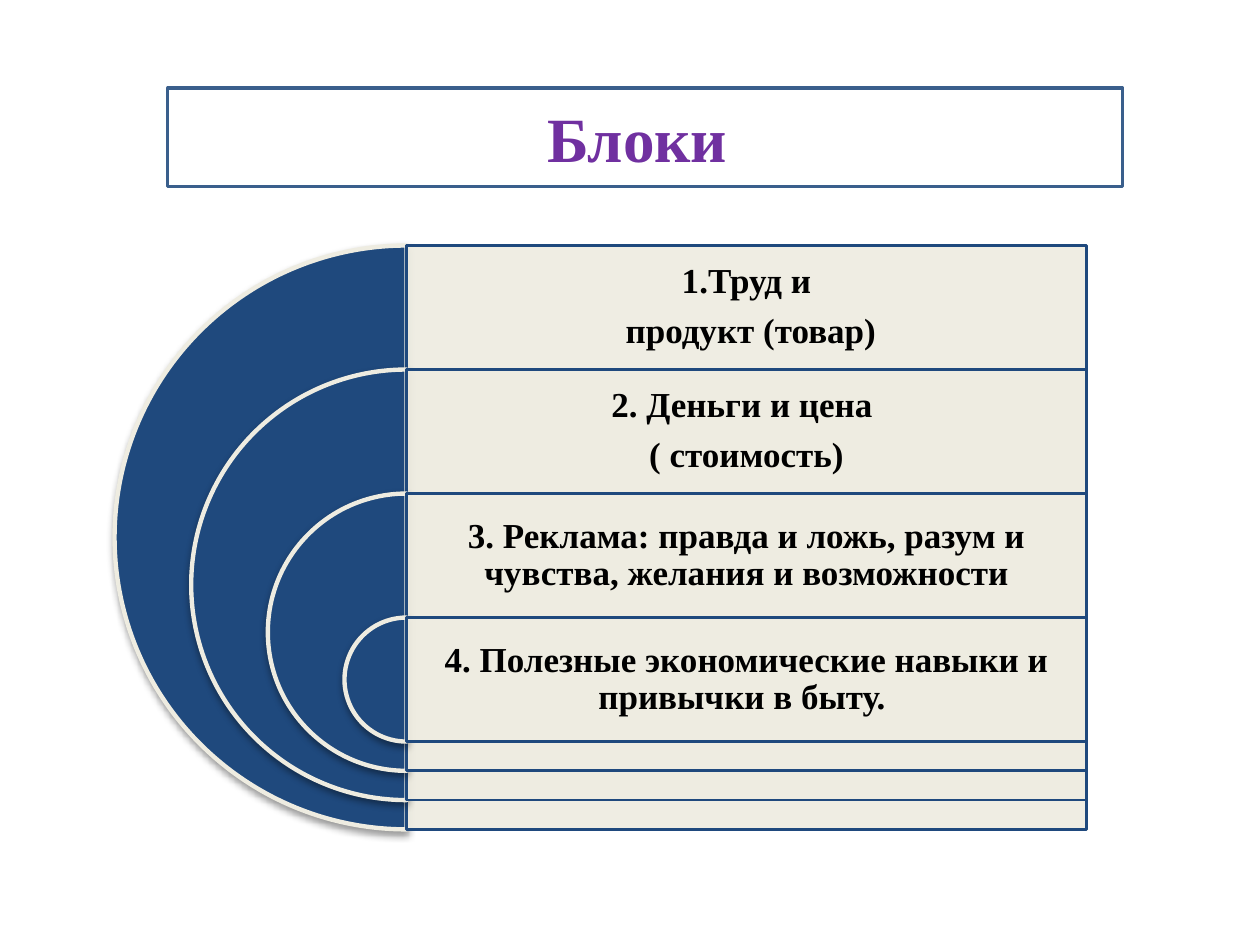
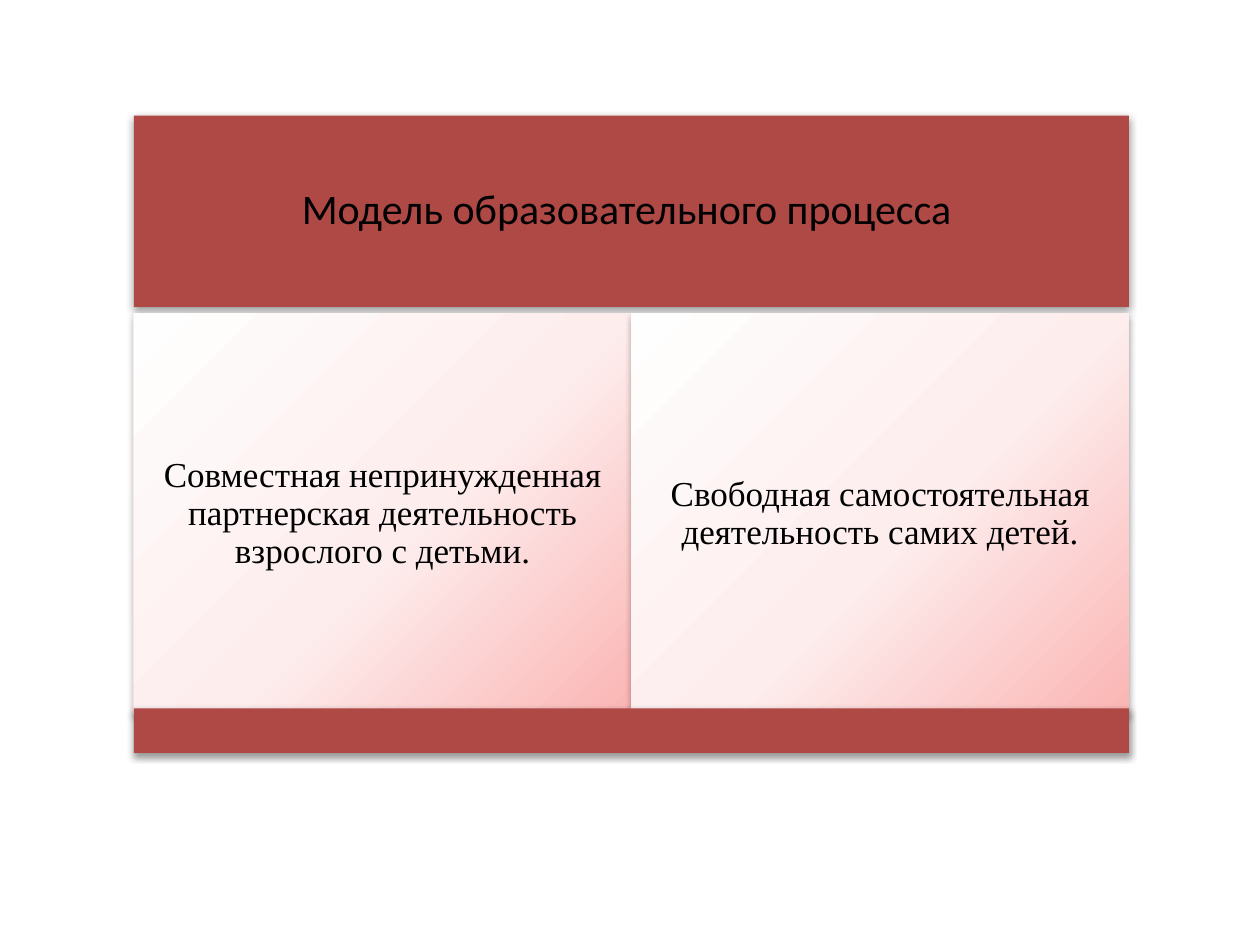
from collections import namedtuple

from lxml.etree import SubElement
from pptx import Presentation
from pptx.dml.color import RGBColor
from pptx.enum.shapes import MSO_SHAPE
from pptx.enum.text import MSO_ANCHOR, PP_ALIGN
from pptx.oxml.ns import qn
from pptx.util import Cm, Pt

Box = namedtuple("Box", "left top width height")

NAVY = "1F497D"
CREAM = "EEECE1"
BRICK = "AE4946"
WHITE = "FFFFFF"
BLACK = "000000"
SERIF = "Times New Roman"
BODY = {"name": SERIF, "size": Pt(20)}
BOLD_BODY = {**BODY, "bold": True}
TITLE = {"name": SERIF, "size": Pt(36), "bold": True}
HEADER = {"name": "Calibri", "size": Pt(24)}
PINK_STOPS = [(0, "FFFEFE"), (55, "FDEDED"), (100, "FBB5B4")]
PINK_FOCUS = {"l": -40, "t": -90, "r": 140, "b": 190}

BLOCKS = [
    ["1.Труд и", " продукт (товар)"],
    ["2. Деньги и цена ", "( стоимость)"],
    ["3. Реклама: правда и ложь, разум и чувства, желания и возможности"],
    ["4. Полезные экономические навыки и привычки в быту. "],
]
ACTIVITIES = [
    "Совместная непринужденная партнерская деятельность взрослого с детьми.",
    "Свободная самостоятельная деятельность самих детей.",
]


def color(hex_text):
    return RGBColor.from_string(hex_text)


def percent(value):
    return str(value * 1000)


def element(parent, tag, **attributes):
    return SubElement(parent, qn(f"a:{tag}"), attributes)


def add_panel(page, box, fill=None, line=None, kind=MSO_SHAPE.RECTANGLE):
    panel = page.shapes.add_shape(kind, *map(Cm, box))
    panel.shadow.inherit = False
    if fill:
        panel.fill.solid()
        panel.fill.fore_color.rgb = color(fill)
    if line:
        line_color, line_width = line
        panel.line.color.rgb = color(line_color)
        panel.line.width = Pt(line_width)
    else:
        panel.line.fill.background()
    return panel


def set_alpha(panel, value):
    tone = panel._element.spPr.find(qn("a:solidFill"))[0]
    element(tone, "alpha", val=percent(value))


def drop_shadow(panel):
    effects = panel._element.spPr.find(qn("a:effectLst"))
    shadow = element(effects, "outerShdw", blurRad=str(Pt(4.1)), dist=str(Pt(2)),
                     dir="5400000", rotWithShape="0")
    tone = element(shadow, "srgbClr", val=BLACK)
    element(tone, "alpha", val=percent(40))


def fill_radial(panel, stops, focus):
    panel.fill.gradient()
    gradient = panel._element.spPr.find(qn("a:gradFill"))
    for child in list(gradient):
        gradient.remove(child)
    stop_list = element(gradient, "gsLst")
    for position, tone in stops:
        stop = element(stop_list, "gs", pos=percent(position))
        element(stop, "srgbClr", val=tone)
    radial = element(gradient, "path", path="circle")
    element(radial, "fillToRect", **{side: percent(v) for side, v in focus.items()})


def write(shape, lines, style, tone=BLACK, inset=None, tight=True):
    frame = shape.text_frame
    frame.word_wrap = True
    frame.vertical_anchor = MSO_ANCHOR.MIDDLE
    if inset is not None:
        for side in ("left", "right", "top", "bottom"):
            setattr(frame, f"margin_{side}", Cm(inset))
    for index, line in enumerate(lines):
        para = frame.add_paragraph() if index else frame.paragraphs[0]
        para.alignment = PP_ALIGN.CENTER
        if tight:
            para.line_spacing = 0.9
            para.space_after = Pt(style["size"].pt * 0.35)
        span = para.add_run()
        span.text = line
        for name, value in style.items():
            setattr(span.font, name, value)
        span.font.color.rgb = color(tone)


def add_title(page, box, text):
    panel = add_panel(page, box, WHITE, ("3A5F8C", 2))
    write(panel, [text], TITLE, "7030A0", tight=False)


def add_nested_blocks(page, box, blocks, band=2.5):
    lip = (box.height - len(blocks) * band) / (len(blocks) - 1)
    center = box.left + box.height / 2
    bar_width = box.width - box.height / 2
    for index, lines in enumerate(blocks):
        top = box.top + index * band
        size = box.height - index * (band + lip)
        half_disc = add_panel(page, Box(center - size / 2, top, size, size),
                              NAVY, (CREAM, 2.5), MSO_SHAPE.PIE)
        half_disc.adjustments[0] = 54
        half_disc.adjustments[1] = 162
        drop_shadow(half_disc)
        bar = add_panel(page, Box(center, top, bar_width, size), CREAM, (NAVY, 1.5))
        set_alpha(bar, 90)
        label = page.shapes.add_textbox(*map(Cm, (center, top, bar_width, band)))
        write(label, lines, BOLD_BODY, inset=0.2)


def add_process_model(page, box, header, columns):
    head_height = box.height * 0.3
    head = add_panel(page, box._replace(height=head_height), BRICK)
    drop_shadow(head)
    write(head, [header], HEADER, inset=0.25)

    width = box.width / len(columns)
    top = box.top + head_height + 0.13
    for index, text in enumerate(columns):
        column = add_panel(page, Box(box.left + index * width, top, width, box.height * 0.63))
        fill_radial(column, PINK_STOPS, PINK_FOCUS)
        drop_shadow(column)
        write(column, [text], BODY, inset=0.2)

    foot_height = box.height * 0.07
    foot_top = box.top + box.height - foot_height
    drop_shadow(add_panel(page, box._replace(top=foot_top, height=foot_height), BRICK))


def add_page(deck):
    page = deck.slides.add_slide(deck.slide_layouts[6])
    page.background.fill.solid()
    page.background.fill.fore_color.rgb = color(WHITE)
    return page


def main():
    deck = Presentation()
    deck.slide_width, deck.slide_height = Cm(25.4), Cm(19.05)

    page = add_page(deck)
    add_nested_blocks(page, Box(2.31, 4.95, 19.59, 11.77), BLOCKS)
    add_title(page, Box(3.38, 1.78, 19.25, 1.98), "Блоки ")

    page = add_page(deck)
    add_process_model(page, Box(2.7, 2.33, 20.06, 12.85),
                      "Модель образовательного процесса ", ACTIVITIES)

    deck.save("out.pptx")


if __name__ == "__main__":
    main()
